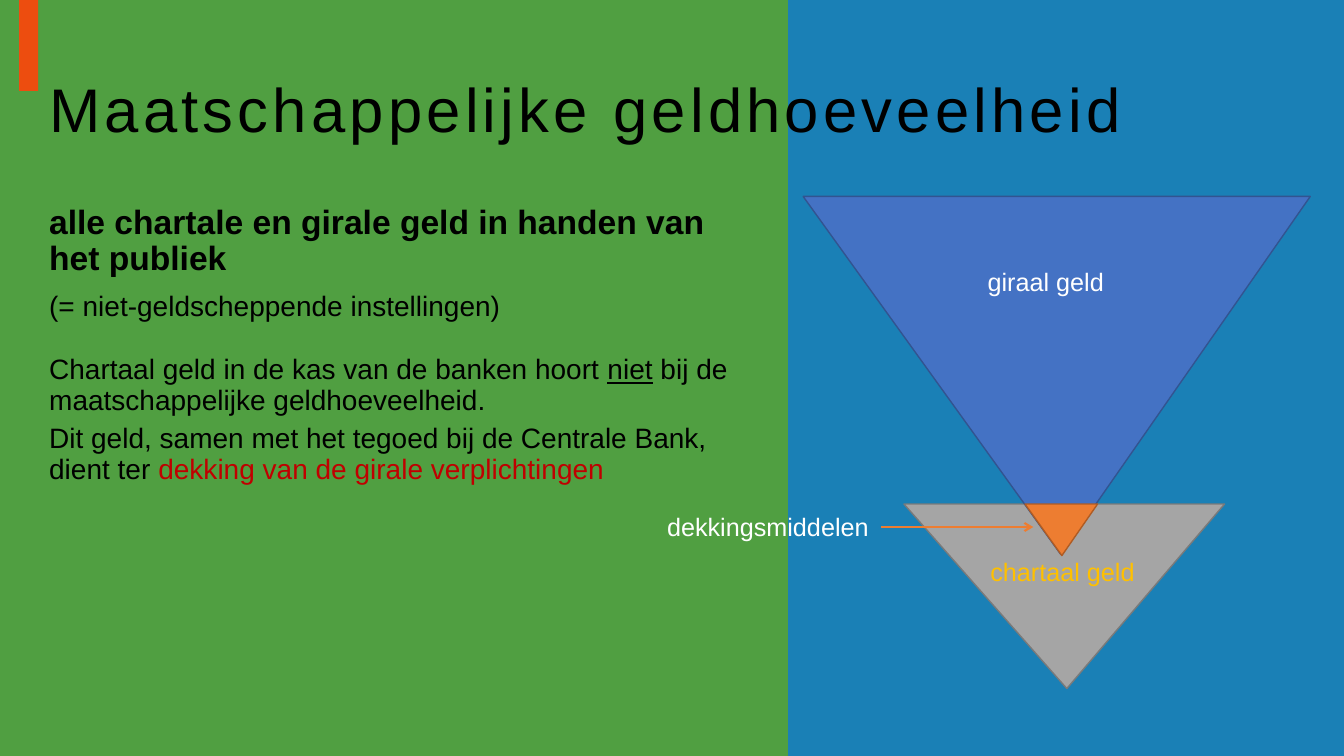
from dataclasses import dataclass

from lxml import etree
from pptx import Presentation
from pptx.dml.color import RGBColor
from pptx.enum.shapes import MSO_CONNECTOR, MSO_SHAPE
from pptx.enum.text import MSO_ANCHOR, MSO_AUTO_SIZE, PP_ALIGN
from pptx.oxml.ns import qn
from pptx.util import Cm, Pt

RECT = MSO_SHAPE.RECTANGLE
CONE = MSO_SHAPE.ISOSCELES_TRIANGLE
LINE = MSO_CONNECTOR.STRAIGHT
LEFT = PP_ALIGN.LEFT
TOP, MIDDLE = MSO_ANCHOR.TOP, MSO_ANCHOR.MIDDLE
FIXED, GROW = MSO_AUTO_SIZE.NONE, MSO_AUTO_SIZE.SHAPE_TO_FIT_TEXT


@dataclass(frozen=True)
class Theme:
    """Colours, type sizes and font of the slide."""
    font: str = "Arial"
    green: str = "258812"
    blue: str = "1A80B6"
    bar: str = "ED4D0F"
    ink: str = "000000"
    white: str = "FFFFFF"
    red: str = "C00000"
    gold: str = "FFC000"
    giro: tuple = ("4472C4", "325491")
    cash: tuple = ("A5A5A5", "7A7A7A")
    cover: tuple = ("ED7D31", "AF5C24")
    title: int = 44
    lead: int = 24
    body: int = 20
    label: int = 18


def color(code):
    """Turn a hex code into a colour."""
    return RGBColor.from_string(code)


def write(para, text, font, size, tint, bold=False, under=False, track=0):
    """Add a formatted run to a paragraph."""
    run = para.add_run()
    run.text = text
    run.font.name, run.font.size = font, Pt(size)
    run.font.bold, run.font.underline = bold, under
    run.font.color.rgb = color(tint)
    if track:
        run.font._element.set("spc", str(track * 100))


class Page:
    """Draws elements on one slide in one style."""

    def __init__(self, slide, theme):
        """Keep the slide and its theme."""
        self.slide, self.theme = slide, theme

    def place(self, shape, box):
        """Move and size a shape in centimetres."""
        shape.left, shape.top, shape.width, shape.height = map(Cm, box)

    def shape(self, kind, box, fill, edge=None, alpha=None):
        """Draw a filled preset shape."""
        item = self.slide.shapes.add_shape(kind, *map(Cm, box))
        item.shadow.inherit = False
        item.fill.solid()
        item.fill.fore_color.rgb = color(fill)
        if alpha:
            tone = item.element.find(".//" + qn("a:srgbClr"))
            etree.SubElement(tone, qn("a:alpha"), val=str(alpha * 1000))
        if edge:
            item.line.color.rgb = color(edge)
            item.line.width = Pt(1)
        else:
            item.line.fill.background()
        return item

    def cone(self, box, tones):
        """Draw a triangle that points down."""
        item = self.shape(CONE, box, *tones)
        item.adjustments[0] = 0.492
        item.rotation = 180

    def title(self, box, text):
        """Place and format the title above the panels."""
        item = self.slide.shapes.title
        item.element.getparent().append(item.element)
        self.place(item, box)
        frame = item.text_frame
        frame.auto_size, frame.vertical_anchor = FIXED, MIDDLE
        para = frame.paragraphs[0]
        para.alignment, para.line_spacing = LEFT, 0.9
        write(para, text, self.theme.font, self.theme.title, self.theme.ink, track=3)

    def body(self, box, paras):
        """Write paragraphs given as space before and runs."""
        frame = self.slide.shapes.add_textbox(*map(Cm, box)).text_frame
        frame.word_wrap, frame.vertical_anchor = True, TOP
        for i, (space, runs) in enumerate(paras):
            para = frame.add_paragraph() if i else frame.paragraphs[0]
            para.line_spacing, para.space_before = 0.9, Pt(space)
            for text, look in runs:
                style = {"size": self.theme.body, "tint": self.theme.ink} | look
                write(para, text, self.theme.font, **style)

    def label(self, box, text, tint):
        """Write a one-line label."""
        item = self.slide.shapes.add_textbox(*map(Cm, box))
        frame = item.text_frame
        frame.word_wrap, frame.auto_size = False, GROW
        write(frame.paragraphs[0], text, self.theme.font, self.theme.label, tint)
        return item

    def arrow(self, start, reach, tint):
        """Draw an arrow to the right from a label."""
        x, y = start.left + start.width, start.top + start.height // 2
        item = self.slide.shapes.add_connector(LINE, x, y, Cm(reach), y)
        item.begin_connect(start, 3)
        item.line.color.rgb = color(tint)
        item.line.width = Pt(1.5)
        line = item.element.find(".//" + qn("a:ln"))
        etree.SubElement(line, qn("a:tailEnd"), type="arrow")
        etree.SubElement(item.element.spPr, qn("a:effectLst"))


def main():
    """Build and save the slide."""
    deck = Presentation()
    deck.slide_width, deck.slide_height = Cm(33.87), Cm(19.05)
    theme = Theme()
    page = Page(deck.slides.add_slide(deck.slide_layouts[5]), theme)

    split = 19.86
    page.shape(RECT, (0, 0, split, 19.05), theme.green, alpha=80)
    page.shape(RECT, (split, 0, 33.87 - split, 19.05), theme.blue)
    page.shape(RECT, (0.48, 0, 0.48, 2.29), theme.bar)

    page.title((0.99, 0.99, 32.03, 3.68), "Maatschappelijke geldhoeveelheid")
    page.body((0.99, 5.05, 18.11, 12.09), [
        (10, [("alle chartale en girale geld in handen van het publiek",
               {"size": theme.lead, "bold": True})]),
        (10, [("(= niet-geldscheppende instellingen)", {})]),
        (24, [("Chartaal geld in de kas van de banken hoort ", {}),
              ("niet", {"under": True}),
              (" bij de maatschappelijke geldhoeveelheid.", {})]),
        (6, [("Dit geld, samen met het tegoed bij de Centrale Bank, dient ter ", {}),
             ("dekking van de girale verplichtingen", {"tint": theme.red})]),
    ])

    page.cone((22.78, 12.7, 8.08, 4.65), theme.cash)
    page.cone((20.24, 4.95, 12.78, 9.02), theme.giro)
    page.cone((25.83, 12.7, 1.83, 1.3), theme.cover)

    cover = page.label((16.56, 12.77, 5.64, 1.02), "dekkingsmiddelen", theme.white)
    page.label((24.71, 13.89, 4.32, 1.02), "chartaal geld", theme.gold)
    page.label((24.64, 6.58, 3.48, 1.02), "giraal geld", theme.white)
    page.arrow(cover, 26.04, theme.cover[0])

    deck.save("out.pptx")


if __name__ == "__main__":
    main()
